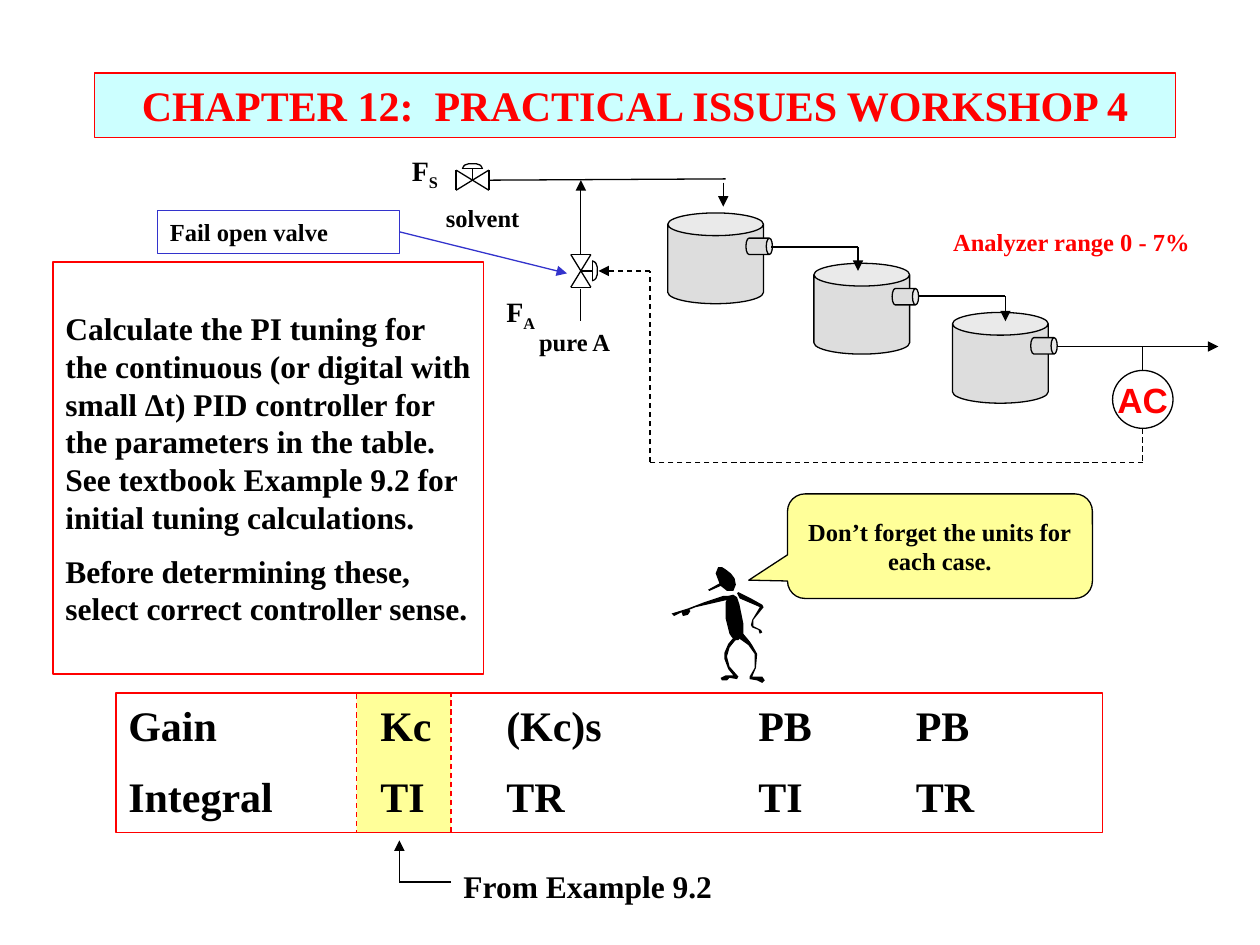
"""Builds the practical issues workshop slide with its three-tank analyzer control loop."""
from math import cos, pi, sin
from typing import Any, NamedTuple, Optional

from lxml import etree
from pptx import Presentation
from pptx import util as u
from pptx.dml.color import RGBColor
from pptx.enum import dml, shapes, text
from pptx.oxml.ns import qn

PX = 9144
SERIF = "Times New Roman"
COLOURS = {
    "black": "000000", "red": "FF0000", "blue": "3333CC",
    "cyan": "CCFFFF", "yellow": "FFFF99", "grey": "DDDDDD",
}
SHAPE = shapes.MSO_SHAPE
CENTER = text.PP_ALIGN.CENTER
MIDDLE = text.MSO_ANCHOR.MIDDLE
TOP = text.MSO_ANCHOR.TOP
Point = tuple[int, int]


class Box(NamedTuple):
    left: int
    top: int
    width: int
    height: int

    def emu(self) -> list[int]:
        return [side * PX for side in self]


class Style(NamedTuple):
    size: int
    colour: str = "black"
    font: str = SERIF
    align: Optional[text.PP_ALIGN] = None
    anchor: text.MSO_ANCHOR = TOP
    wrap: bool = True


class Pipe(NamedTuple):
    start: Point
    end: Point
    arrow: bool = False
    dashed: bool = False
    colour: str = "black"


class Label(NamedTuple):
    box: Box
    words: str
    style: Style
    subscript: str = ""


def rgb(name: str) -> RGBColor:
    return RGBColor.from_string(COLOURS[name])


def paint(shape: Any, fill: Optional[str], line: Optional[str], dashed: bool = False) -> None:
    if fill:
        shape.fill.solid()
        shape.fill.fore_color.rgb = rgb(fill)
    else:
        shape.fill.background()
    if line:
        shape.line.color.rgb = rgb(line)
        shape.line.width = u.Pt(0.75)
        if dashed:
            shape.line.dash_style = dml.MSO_LINE.DASH
    else:
        shape.line.fill.background()


def write(shape: Any, lines: list[str], style: Style, gap: float = 0) -> None:
    frame = shape.text_frame
    frame.text = "\n".join(lines)
    frame.word_wrap = style.wrap
    frame.auto_size = text.MSO_AUTO_SIZE.NONE
    frame.vertical_anchor = style.anchor
    for index, paragraph in enumerate(frame.paragraphs):
        paragraph.alignment = style.align or text.PP_ALIGN.LEFT
        paragraph.space_before = u.Pt(gap if index else 0)
        font = paragraph.font
        font.name, font.size, font.bold = style.font, u.Pt(style.size), True
        font.color.rgb = rgb(style.colour)


def draw_shape(parent: Any, kind: shapes.MSO_SHAPE, box: Box, fill: Optional[str] = None,
               line: str = "black", dashed: bool = False) -> Any:
    shape = parent.add_shape(kind, *box.emu())
    shape.shadow.inherit = False
    paint(shape, fill, line, dashed)
    return shape


def draw_label(parent: Any, label: Label) -> None:
    box = parent.add_textbox(*label.box.emu())
    write(box, [label.words], label.style)
    if label.subscript:
        run = box.text_frame.paragraphs[0].add_run()
        run.text = label.subscript
        run.font._element.set("baseline", "-25000")


def draw_pipe(parent: Any, pipe: Pipe) -> Any:
    ends = [value * PX for value in (*pipe.start, *pipe.end)]
    connector = parent.add_connector(shapes.MSO_CONNECTOR.STRAIGHT, *ends)
    connector.line.color.rgb = rgb(pipe.colour)
    connector.line.width = u.Pt(0.75)
    if pipe.dashed:
        connector.line.dash_style = dml.MSO_LINE.DASH
    properties = connector._element.spPr
    if pipe.arrow:
        etree.SubElement(properties.find(qn("a:ln")), qn("a:tailEnd"), type="triangle")
    etree.SubElement(properties, qn("a:effectLst"))
    return connector


def draw_outline(parent: Any, points: list[Point], fill: Optional[str] = None,
                 line: Optional[str] = None) -> None:
    builder = parent.build_freeform(*points[0], scale=PX)
    builder.add_line_segments(points[1:], close=fill is not None)
    outline = builder.convert_to_shape()
    outline.shadow.inherit = False
    paint(outline, fill, line)


def draw_valve(parent: Any, x: int, y: int, upright: bool) -> None:
    def place(along: float, out: float) -> Point:
        return (round(x + out), round(y + along)) if upright else (round(x + along), round(y - out))

    strokes = [((-13, -8), (-13, 8)), ((13, -8), (13, 8)), ((-13, -8), (13, 8)),
               ((-13, 8), (13, -8)), ((0, 0), (0, 9)), ((-8, 9), (8, 9))]
    for start, end in strokes:
        draw_pipe(parent, Pipe(place(*start), place(*end)))
    dome = [place(8 * cos(step * pi / 8), 9 + 4 * sin(step * pi / 8)) for step in range(9)]
    draw_outline(parent, dome, line="black")


def draw_tank(parent: Any, left: int, top: int) -> None:
    draw_shape(parent, SHAPE.CAN, Box(left, top, 76, 72), "grey")
    nozzle = draw_shape(parent, SHAPE.CAN, Box(left + 66, top + 16, 13, 21), "grey")
    nozzle.adjustments[0] = 0.375
    nozzle.rotation = 90


TANKS = [(530, 169), (646, 209), (756, 248)]
PIPES = [
    Pipe((612, 196), (681, 196)), Pipe((681, 196), (681, 215), True),
    Pipe((729, 235), (798, 235)), Pipe((798, 235), (798, 255), True),
    Pipe((839, 275), (967, 275), True), Pipe((388, 143), (576, 142)),
    Pipe((574, 145), (574, 164), True), Pipe((461, 202), (461, 143), True),
    Pipe((461, 229), (461, 255)), Pipe((907, 294), (907, 275)),
    Pipe((907, 340), (907, 367), dashed=True), Pipe((907, 367), (516, 367), dashed=True),
    Pipe((516, 367), (516, 215), dashed=True), Pipe((516, 215), (475, 215), True, True),
]
STREAMS = [
    Label(Box(344, 156, 78, 33), "solvent", Style(14, wrap=False)),
    Label(Box(418, 255, 78, 33), "pure A", Style(14, wrap=False)),
    Label(Box(317, 117, 62, 37), "F", Style(16), "S"),
    Label(Box(392, 229, 48, 37), "F", Style(16), "A"),
]
FIGURE = {
    "head": [(573, 450), (570, 450), (568, 455), (571, 463), (562, 468), (563, 469), (572, 465),
             (577, 469), (582, 469), (584, 464), (583, 459), (580, 455), (576, 452)],
    "pointing arm": [(578, 473), (574, 473), (559, 478), (546, 483), (533, 487), (535, 489),
                     (541, 486), (542, 489), (546, 488), (548, 485), (547, 484), (552, 482),
                     (565, 479), (578, 476)],
    "torso": [(582, 472), (578, 473), (576, 478), (576, 491), (579, 503), (581, 506), (584, 508),
              (586, 508), (590, 504), (590, 495), (587, 480), (585, 474)],
    "bent arm": [(590, 472), (586, 470), (585, 471), (587, 475), (601, 481), (603, 482),
                 (597, 492), (596, 496), (597, 498), (602, 500), (603, 503), (605, 502),
                 (604, 500), (598, 497), (598, 492), (606, 482), (605, 480), (596, 475)],
    "left leg": [(583, 509), (585, 507), (585, 505), (583, 505), (578, 511), (575, 518),
                 (575, 523), (578, 531), (582, 536), (576, 536), (572, 538), (573, 540),
                 (577, 540), (579, 538), (585, 539), (586, 537), (579, 529), (577, 521),
                 (579, 514)],
    "right leg": [(595, 509), (590, 503), (587, 504), (587, 507), (594, 512), (599, 519),
                  (599, 530), (595, 537), (595, 539), (601, 540), (605, 542), (607, 540),
                  (605, 537), (597, 537), (600, 530), (601, 519), (597, 512)],
}
TUNING_TABS = (200, 300, 500, 625)
TUNING = [["Gain", "Kc", "(Kc)s", "PB", "PB"], ["Integral", "TI", "TR", "TI", "TR"]]
TASK = [
    "Calculate the PI tuning for the continuous (or digital with small Δt) PID controller for "
    "the parameters in the table.  See textbook Example 9.2 for initial tuning calculations.",
    "Before determining these, select correct controller sense.",
]


def draw_process(parent: Any) -> None:
    for tank in TANKS:
        draw_tank(parent, *tank)
    for pipe in PIPES:
        draw_pipe(parent, pipe)
    draw_valve(parent, 375, 143, False)
    draw_valve(parent, 461, 215, True)
    for stream in STREAMS:
        draw_label(parent, stream)
    analyzer = draw_shape(parent, SHAPE.OVAL, Box(883, 294, 48, 46))
    write(analyzer, ["AC"], Style(20, "red", "Arial", CENTER, MIDDLE, False))


def draw_tuning(parent: Any) -> None:
    draw_shape(parent, SHAPE.RECTANGLE, Box(283, 550, 75, 111), "yellow", "red", True)
    tuning = draw_shape(parent, SHAPE.RECTANGLE, Box(92, 550, 783, 111), line="red")
    write(tuning, ["\t".join(row) for row in TUNING], Style(24), 12)
    for paragraph in tuning.text_frame.paragraphs:
        stops = etree.Element(qn("a:tabLst"))
        for position in TUNING_TABS:
            etree.SubElement(stops, qn("a:tab"), pos=str(position * PX), algn="l")
        paragraph.font._element.addprevious(stops)
    draw_label(parent, Label(Box(358, 683, 417, 40), "From Example 9.2", Style(18)))
    draw_pipe(parent, Pipe((358, 700), (317, 700)))
    draw_pipe(parent, Pipe((317, 700), (317, 667), True))


def main() -> None:
    deck = Presentation()
    deck.slide_width, deck.slide_height = 1000 * PX, 750 * PX
    slide = deck.slides.add_slide(deck.slide_layouts[5])
    canvas = slide.shapes
    title = canvas.title
    title.left, title.top, title.width, title.height = Box(75, 58, 858, 51).emu()
    paint(title, "cyan", "red")
    write(title, ["CHAPTER 12:  PRACTICAL ISSUES WORKSHOP 4"], Style(24, "red", align=CENTER))
    draw_process(canvas.add_group_shape().shapes)
    task = draw_shape(canvas, SHAPE.RECTANGLE, Box(42, 208, 342, 327), line="red")
    write(task, TASK, Style(18, anchor=MIDDLE), 9)
    draw_tuning(canvas)
    person = canvas.add_group_shape().shapes
    for points in FIGURE.values():
        draw_outline(person, points, "black")
    reminder = draw_shape(canvas, SHAPE.ROUNDED_RECTANGULAR_CALLOUT, Box(625, 392, 242, 83), "yellow")
    reminder.adjustments[0], reminder.adjustments[1] = -0.627, 0.325
    write(reminder, ["Don’t forget the units for", "each case."],
          Style(14, align=CENTER, anchor=MIDDLE, wrap=False))
    fail_open = draw_shape(canvas, SHAPE.RECTANGLE, Box(125, 167, 192, 34), line="blue")
    write(fail_open, ["Fail open valve"], Style(14))
    pointer = draw_pipe(canvas, Pipe((317, 184), (450, 217), True, colour="blue"))
    pointer.begin_connect(fail_open, 3)
    draw_label(canvas, Label(Box(717, 175, 267, 33), "Analyzer range 0 - 7%", Style(14, "red", align=CENTER)))
    deck.save("out.pptx")


if __name__ == "__main__":
    main()
